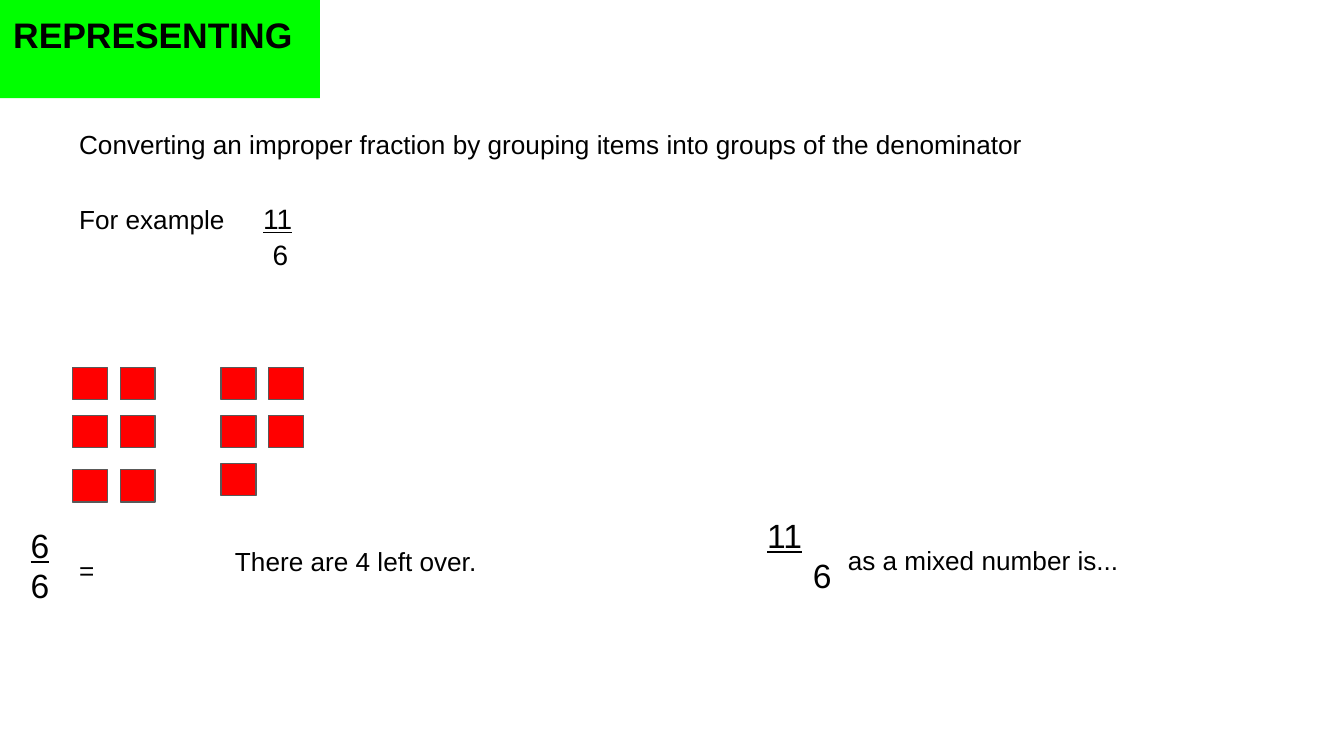
from lxml import etree
from pptx import Presentation
from pptx.dml.color import RGBColor
from pptx.enum.shapes import MSO_SHAPE
from pptx.enum.text import MSO_ANCHOR, PP_ALIGN
from pptx.oxml.ns import qn
from pptx.util import Inches, Pt

RECTANGLE = MSO_SHAPE.RECTANGLE
TOP = MSO_ANCHOR.TOP
LEFT = PP_ALIGN.LEFT
WIDTH = Inches(10)
HEIGHT = WIDTH * 9 // 16
INSET = Inches(0.1)
BLACK, RED, GREEN, GREY = "000000", "FF0000", "00FF00", "595959"
SQUARE_WIDTH, SQUARE_HEIGHT = 2.6, 4.3
COLUMN_STEP, ROW_STEP = 3.55, 6.35
FIRST_ROW = 48.58


def color(value):
    return RGBColor.from_string(value)


def place(left, top, width, height):
    return (
        round(WIDTH * left / 100),
        round(HEIGHT * top / 100),
        round(WIDTH * width / 100),
        round(HEIGHT * height / 100),
    )


def prepare_frame(box):
    frame = box.text_frame
    frame.word_wrap = True
    frame.vertical_anchor = TOP
    frame.margin_left = frame.margin_right = INSET
    frame.margin_top = frame.margin_bottom = INSET
    return frame


def style(para, size, bold=False, underline=False):
    para.alignment = LEFT
    font = para.font
    font.name = "Arial"
    font.size = Pt(size)
    font.bold = bold
    font.underline = underline
    font.color.rgb = color(BLACK)


def indent(para, distance):
    properties = para._p.get_or_add_pPr()
    properties.set("marL", str(Inches(distance)))
    properties.set("indent", "0")


def add_tab_stop(para, distance):
    stops = etree.SubElement(para._p.get_or_add_pPr(), qn("a:tabLst"))
    etree.SubElement(stops, qn("a:tab"), pos=str(Inches(distance)), algn="l")


def add_rectangle(page, area, fill, line=None):
    box = page.shapes.add_shape(RECTANGLE, *place(*area))
    box.shadow.inherit = False
    box.fill.solid()
    box.fill.fore_color.rgb = color(fill)
    if line:
        box.line.color.rgb = color(line)
        box.line.width = Pt(0.75)
    else:
        box.line.fill.background()
    return box


def add_title(page, text):
    box = add_rectangle(page, (0, 0, 23.8, 13), GREEN)
    para = prepare_frame(box).paragraphs[0]
    para.text = text
    style(para, 19, bold=True)


def add_text(page, area, text):
    frame = prepare_frame(page.shapes.add_textbox(*place(*area)))
    para = frame.paragraphs[0]
    para.text = text
    style(para, 14)
    return frame


def add_fraction(page, area, numerator, denominator, shift=0):
    frame = prepare_frame(page.shapes.add_textbox(*place(*area)))
    upper, lower = frame.paragraphs[0], frame.add_paragraph()
    upper.text, lower.text = numerator, denominator
    style(upper, 18, underline=True)
    style(lower, 18)
    indent(lower, shift)


def add_introduction(page):
    frame = add_text(
        page,
        (4.9, 15.2, 91.2, 27),
        "Converting an improper fraction by grouping items into groups of the denominator",
    )
    example = frame.add_paragraph()
    add_tab_stop(example, 1.37)
    example.space_before = Pt(22.2)
    style(example, 14)
    example.add_run().text = "For example\t"
    numerator = example.add_run()
    numerator.text = "11"
    numerator.font.size = Pt(15)
    numerator.font.underline = True
    denominator = frame.add_paragraph()
    denominator.text = "6"
    denominator.space_before = Pt(1.4)
    style(denominator, 15)
    indent(denominator, 1.44)


def add_squares(page, left, count, last_row):
    rows = [FIRST_ROW, FIRST_ROW + ROW_STEP, last_row]
    for index in range(count):
        row, column = divmod(index, 2)
        area = (left + column * COLUMN_STEP, rows[row], SQUARE_WIDTH, SQUARE_HEIGHT)
        add_rectangle(page, area, RED, GREY)


def main():
    deck = Presentation()
    deck.slide_width, deck.slide_height = WIDTH, HEIGHT
    page = deck.slides.add_slide(deck.slide_layouts[6])
    add_introduction(page)
    add_squares(page, 5.4, 6, 62.1)
    add_squares(page, 16.45, 5, FIRST_ROW + 2 * ROW_STEP)
    add_fraction(page, (1.3, 67.6, 9.7, 16.2), "6", "6")
    add_fraction(page, (56.1, 66.35, 9.7, 16.2), "11", "6", 0.34)
    add_text(page, (4.9, 71.5, 2.6, 8.5), "=")
    add_text(page, (62.1, 70.2, 28, 8.5), "as a mixed number is...")
    add_text(page, (16.5, 70.4, 29.2, 9.6), "There are 4 left over.")
    add_title(page, "REPRESENTING")
    deck.save("out.pptx")


if __name__ == "__main__":
    main()
